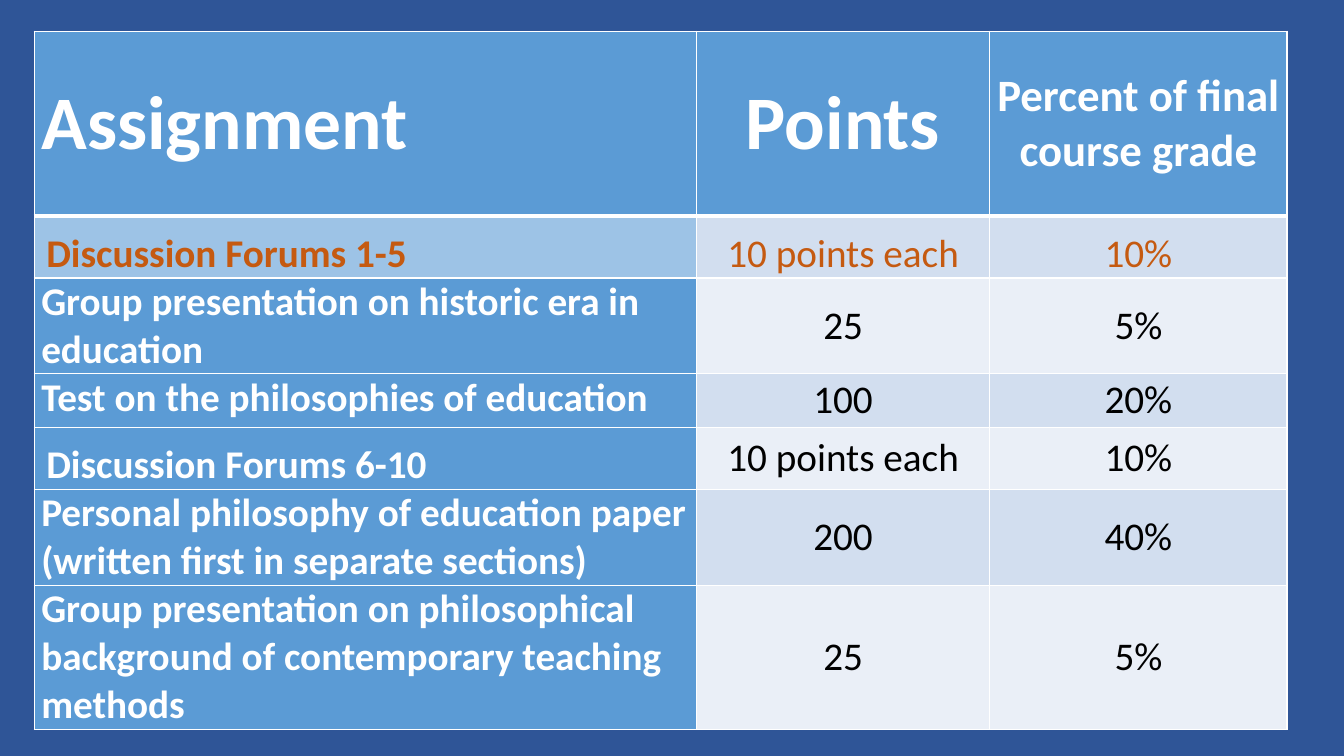
from lxml import etree
from pptx import Presentation
from pptx.dml.color import RGBColor
from pptx.enum.text import MSO_ANCHOR, PP_ALIGN
from pptx.oxml.ns import qn
from pptx.util import Pt

LEFT, CENTER = PP_ALIGN.LEFT, PP_ALIGN.CENTER
TOP, MIDDLE = MSO_ANCHOR.TOP, MSO_ANCHOR.MIDDLE

NAVY, BLUE, LIGHT_BLUE = "2F5597", "5B9BD5", "9DC3E6"
BANDS = ("D2DEEF", "EAEFF7")
WHITE, BLACK, ORANGE = "FFFFFF", "000000", "C55A11"

COLUMN_WIDTHS = (473, 209.5, 212.4)
HEADER_HEIGHT = 131.8
HEADINGS = (("Assignment", 54), ("Points", 54), ("Percent of final course grade", 32))

# Assignment, points, percent, row height
ASSIGNMENTS = (
    ("Discussion Forums 1-5", "10 points each", "10%", 39.6),
    ("Group presentation on historic era in education", "25", "5%", 65.5),
    ("Test on the philosophies of education", "100", "20%", 38.2),
    ("Discussion Forums 6-10", "10 points each", "10%", 39.6),
    ("Personal philosophy of education paper (written first in separate sections)",
     "200", "40%", 65.5),
    ("Group presentation on philosophical background of contemporary teaching methods",
     "25", "5%", 98.6),
)


def rgb(color):
    return RGBColor.from_string(color)


class GradeSlide:
    """Holds the style and the current slide."""

    font = "Calibri"
    cell_format = {
        "margin_left": Pt(5), "margin_right": Pt(5),
        "margin_top": 0, "margin_bottom": 0,
    }

    def __init__(self, presentation):
        self.slide = presentation.slides.add_slide(presentation.slide_layouts[6])
        background = self.slide.background.fill
        background.solid()
        background.fore_color.rgb = rgb(NAVY)

    def table(self, left, top, widths, heights):
        frame = self.slide.shapes.add_table(
            len(heights), len(widths), Pt(left), Pt(top), Pt(sum(widths)), Pt(sum(heights)))
        grid = frame.table
        for column, width in zip(grid.columns, widths):
            column.width = Pt(width)
        for row, height in zip(grid.rows, heights):
            row.height = Pt(height)
        return grid

    def borders(self, cell, top=1, bottom=1):
        properties = cell._tc.get_or_add_tcPr()
        sides = {"a:lnL": 1, "a:lnR": 1, "a:lnT": top, "a:lnB": bottom}
        for position, (side, width) in enumerate(sides.items()):
            line = etree.Element(qn(side), w=str(Pt(width)))
            fill = etree.SubElement(line, qn("a:solidFill"))
            etree.SubElement(fill, qn("a:srgbClr"), val=WHITE)
            properties.insert(position, line)

    def cell(self, cell, text, fill, color, size=28, bold=False, align=CENTER,
             anchor=MIDDLE, spacing=1.0, indent=0):
        for name, value in self.cell_format.items():
            setattr(cell, name, value)
        cell.vertical_anchor = anchor
        cell.fill.solid()
        cell.fill.fore_color.rgb = rgb(fill)
        paragraph = cell.text_frame.paragraphs[0]
        paragraph.alignment = align
        paragraph.line_spacing = spacing
        if indent:
            paragraph._p.get_or_add_pPr().set("marL", str(Pt(indent)))
        run = paragraph.add_run()
        run.text = text
        font_format = {"name": self.font, "size": Pt(size), "bold": bold}
        for name, value in font_format.items():
            setattr(run.font, name, value)
        run.font.color.rgb = rgb(color)


def main():
    presentation = Presentation()
    presentation.slide_width, presentation.slide_height = Pt(960), Pt(540)
    grades = GradeSlide(presentation)
    heights = [HEADER_HEIGHT] + [assignment[-1] for assignment in ASSIGNMENTS]
    grid = grades.table(24.5, 22.3, COLUMN_WIDTHS, heights)

    # Header row
    for column, (heading, size) in enumerate(HEADINGS):
        header = grid.cell(0, column)
        grades.cell(header, heading, BLUE, WHITE, size, bold=True,
                    align=CENTER if column else LEFT)
        grades.borders(header, bottom=3)

    # Assignment rows, the first one highlighted
    for row, (assignment, points, percent, _) in enumerate(ASSIGNMENTS, start=1):
        current = row == 1
        forum = assignment.startswith("Discussion")
        grades.cell(grid.cell(row, 0), assignment, LIGHT_BLUE if current else BLUE,
                    ORANGE if current else WHITE, bold=True, align=LEFT, anchor=TOP,
                    spacing=1.3 if forum else 1.0, indent=3.6 if forum else 0)
        for column, value in enumerate((points, percent), start=1):
            grades.cell(grid.cell(row, column), value, BANDS[(row - 1) % 2],
                        ORANGE if current else BLACK, spacing=1.3 if current else 1.0)
        for column in range(len(COLUMN_WIDTHS)):
            grades.borders(grid.cell(row, column), top=3 if current else 1)

    presentation.save("out.pptx")


if __name__ == "__main__":
    main()
